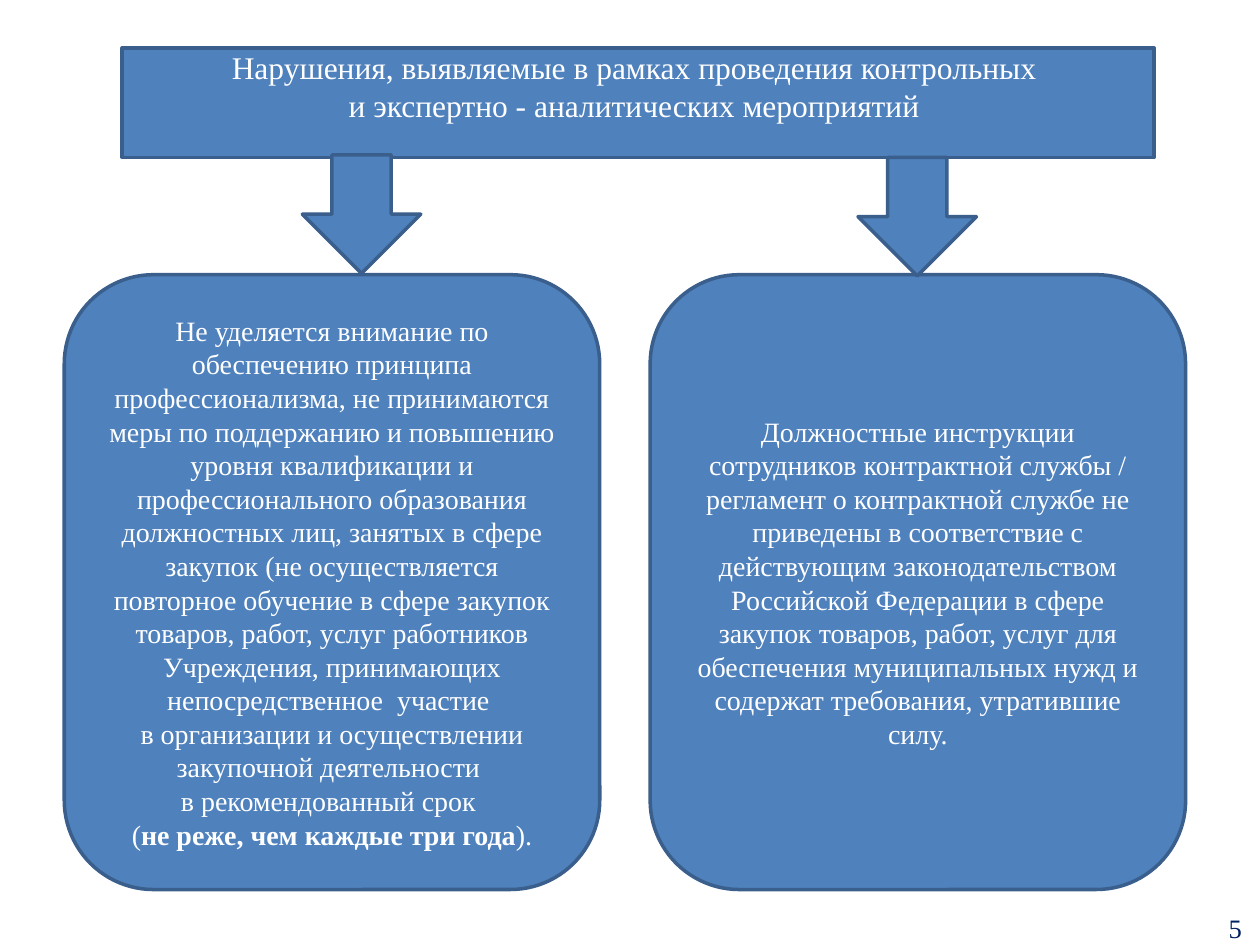
import pptx
import pptx.util
import pptx.dml.color
import pptx.enum.shapes
import pptx.enum.text
import pptx.oxml.ns
import lxml.etree

Inches = pptx.util.Inches
Kind = pptx.enum.shapes.MSO_SHAPE
Anchor = pptx.enum.text.MSO_ANCHOR
qn = pptx.oxml.ns.qn

FILL, EDGE, WHITE, NAVY = "4F81BD", "3A5F8C", "FFFFFF", "002060"
FONT = "Times New Roman"
ARROW = 0.94

TITLE = ("Нарушения, выявляемые в рамках проведения контрольных \n"
         "и экспертно - аналитических мероприятий ")
TRAINING = (
    "Не уделяется внимание по обеспечению принципа профессионализма, "
    "не принимаются меры по поддержанию и повышению уровня квалификации "
    "и профессионального образования должностных лиц, занятых в сфере "
    "закупок (не осуществляется повторное обучение в сфере закупок товаров, "
    "работ, услуг работников Учреждения, принимающих непосредственное  участие \v"
    "в организации и осуществлении закупочной деятельности \v"
    "в рекомендованный срок ")
TERM = [("(", False), ("не реже, чем каждые три года", True), (").", False)]
DUTIES = (
    "Должностные инструкции сотрудников контрактной службы / регламент "
    "о контрактной службе не приведены в соответствие с действующим "
    "законодательством Российской Федерации в сфере закупок товаров, работ, "
    "услуг для обеспечения муниципальных нужд и содержат требования, "
    "утратившие силу.")


def color(code):
    return pptx.dml.color.RGBColor.from_string(code)


def style(frame, size, code):
    """Format all text, including the line breaks inside paragraphs."""
    frame.word_wrap = True
    for para in frame.paragraphs:
        para.alignment = pptx.enum.text.PP_ALIGN.CENTER
        for run in para.runs:
            run.font.size = pptx.util.Pt(size)
            run.font.name = FONT
            run.font.color.rgb = color(code)
        for gap in para._p.findall(qn("a:br")):
            lxml.etree.SubElement(gap, qn("a:rPr")).set("sz", str(size * 100))


def block(slide, kind, left, top, width, height):
    shape = slide.shapes.add_shape(
        kind, Inches(left), Inches(top), Inches(width), Inches(height))
    shape.shadow.inherit = False
    shape.fill.solid()
    shape.fill.fore_color.rgb = color(FILL)
    shape.line.color.rgb = color(EDGE)
    shape.line.width = pptx.util.Pt(2)
    return shape


def header(slide, left, top, width, height):
    frame = block(slide, Kind.RECTANGLE, left, top, width, height).text_frame
    frame.text = TITLE
    frame.vertical_anchor = Anchor.TOP
    frame.margin_top = 0
    style(frame, 18, WHITE)


def panel(slide, left, top, width, height, text, ending=()):
    """Rounded box; ending is a last paragraph of (text, bold) pieces."""
    shape = block(slide, Kind.ROUNDED_RECTANGLE, left, top, width, height)
    frame = shape.text_frame
    frame.text = text
    frame.vertical_anchor = Anchor.MIDDLE
    if ending:
        para = frame.add_paragraph()
        for piece, bold in ending:
            run = para.add_run()
            run.text = piece
            run.font.bold = bold
    style(frame, 16, WHITE)


def number(slide, left, top, width, height):
    box = slide.shapes.add_textbox(
        Inches(left), Inches(top), Inches(width), Inches(height))
    box.text_frame.text = "5"
    style(box.text_frame, 15.2, NAVY)


def main():
    deck = pptx.Presentation()
    deck.slide_width, deck.slide_height = Inches(10), Inches(7.5)
    slide = deck.slides.add_slide(deck.slide_layouts[6])
    header(slide, 0.97, 0.38, 8.19, 0.87)
    panel(slide, 0.51, 2.18, 4.25, 4.88, TRAINING, TERM)
    panel(slide, 5.16, 2.18, 4.25, 4.88, DUTIES)
    for left, top in ((2.4, 1.23), (6.81, 1.25)):
        block(slide, Kind.DOWN_ARROW, left, top, ARROW, ARROW)
    number(slide, 9.61, 7.19, 0.39, 0.31)
    deck.save("out.pptx")


if __name__ == "__main__":
    main()
